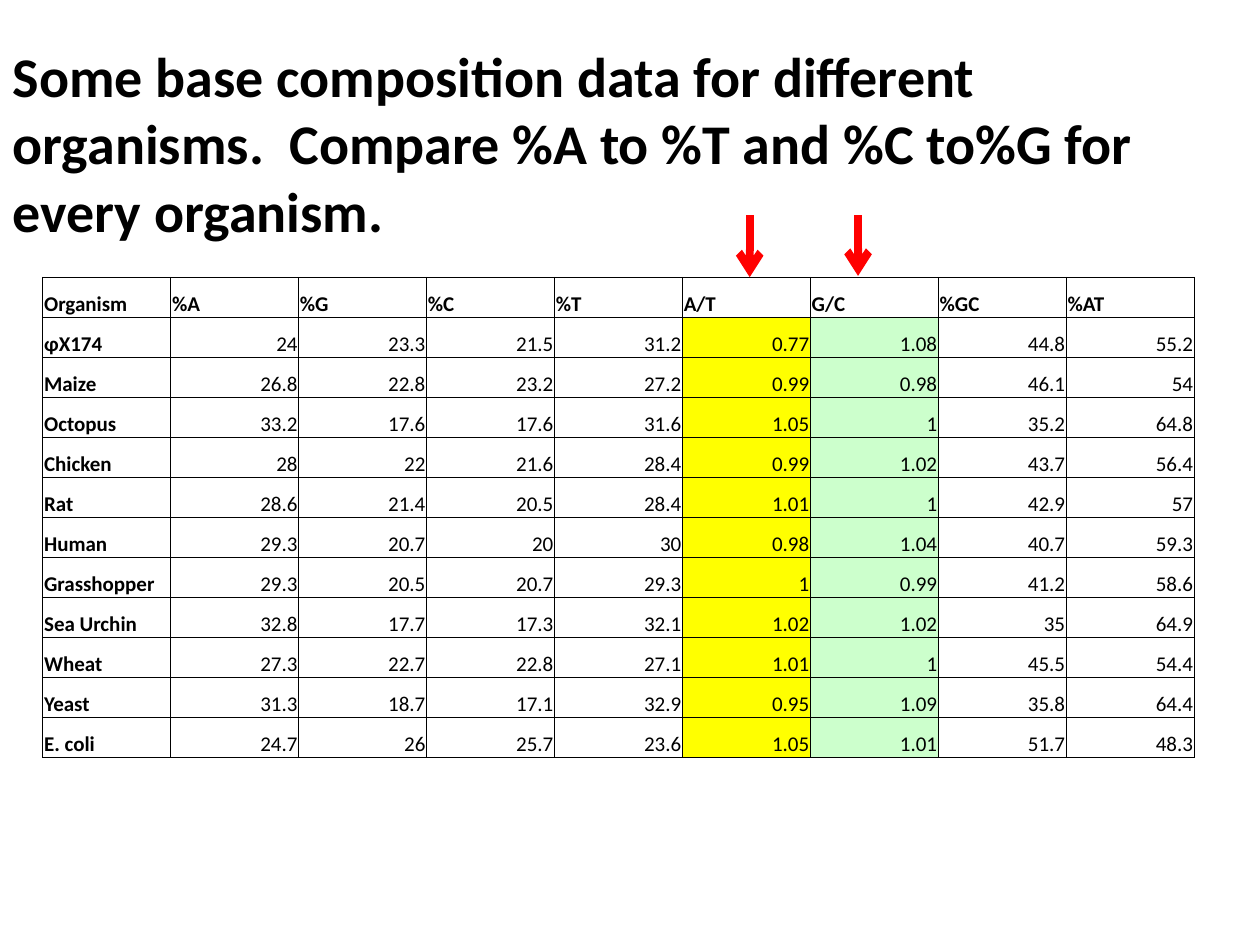
"""Build a slide comparing the base composition of DNA across organisms."""
from lxml import etree
from pptx import Presentation, oxml
from pptx.dml import color
from pptx.enum import shapes, text
from pptx.oxml import ns
from pptx.util import Pt

PX = 9144
THEME = {
    "font": "Calibri", "title": 32, "body": 12, "rule": 0.5, "arrow": 4.5,
    "ink": "000000", "red": "FF0000", "yellow": "FFFF00", "green": "CCFFCC",
}
TITLE = ("Some base composition data for different organisms.  "
         "Compare %A to %T and %C to%G for every organism.")
HEADS = ["Organism", "%A", "%G", "%C", "%T", "A/T", "G/C", "%GC", "%AT"]
DATA = [
    ["φX174", 24, 23.3, 21.5, 31.2, 0.77, 1.08, 44.8, 55.2],
    ["Maize", 26.8, 22.8, 23.2, 27.2, 0.99, 0.98, 46.1, 54],
    ["Octopus", 33.2, 17.6, 17.6, 31.6, 1.05, 1, 35.2, 64.8],
    ["Chicken", 28, 22, 21.6, 28.4, 0.99, 1.02, 43.7, 56.4],
    ["Rat", 28.6, 21.4, 20.5, 28.4, 1.01, 1, 42.9, 57],
    ["Human", 29.3, 20.7, 20, 30, 0.98, 1.04, 40.7, 59.3],
    ["Grasshopper", 29.3, 20.5, 20.7, 29.3, 1, 0.99, 41.2, 58.6],
    ["Sea Urchin", 32.8, 17.7, 17.3, 32.1, 1.02, 1.02, 35, 64.9],
    ["Wheat", 27.3, 22.7, 22.8, 27.1, 1.01, 1, 45.5, 54.4],
    ["Yeast", 31.3, 18.7, 17.1, 32.9, 0.95, 1.09, 35.8, 64.4],
    ["E. coli", 24.7, 26, 25.7, 23.6, 1.05, 1.01, 51.7, 48.3],
]
FILLS = {"A/T": THEME["yellow"], "G/C": THEME["green"]}
CELL = {
    "margin_left": PX, "margin_right": PX, "margin_top": PX, "margin_bottom": 0,
    "vertical_anchor": text.MSO_ANCHOR.BOTTOM,
}


def write(para, words, size, bold, align):
    run = para.add_run()
    run.text = words
    para.alignment = align
    look = {"name": THEME["font"], "size": Pt(THEME[size]), "bold": bold}
    for key, value in look.items():
        setattr(run.font, key, value)
    run.font.color.rgb = color.RGBColor.from_string(THEME["ink"])


def border(cell):
    props = cell._tc.get_or_add_tcPr()
    for side in "LRTB":
        props.append(oxml.parse_xml(
            f'<a:ln{side} {ns.nsdecls("a")} w="{Pt(THEME["rule"])}"><a:solidFill>'
            f'<a:srgbClr val="{THEME["ink"]}"/></a:solidFill></a:ln{side}>'))


deck = Presentation()
deck.slide_width, deck.slide_height = 1000 * PX, 750 * PX
slide = deck.slides.add_slide(deck.slide_layouts[5])

title = slide.shapes.title
place = {"left": 0, "top": 28, "width": 989, "height": 172}
for key, value in place.items():
    setattr(title, key, value * PX)
frame = title.text_frame
frame.word_wrap = True
frame.auto_size = text.MSO_AUTO_SIZE.NONE
frame.vertical_anchor = text.MSO_ANCHOR.TOP
write(frame.paragraphs[0], TITLE, "title", True, text.PP_ALIGN.LEFT)

rows = [HEADS] + DATA
wide, high = 914 * PX, 381 * PX
table = slide.shapes.add_table(
    len(rows), len(HEADS), 34 * PX, 220 * PX, wide, high).table
table.first_row = table.horz_banding = False
for col in table.columns:
    col.width = wide // len(HEADS)
for r, row in enumerate(rows):
    table.rows[r].height = high // len(rows)
    for c, value in enumerate(row):
        cell = table.cell(r, c)
        for key, item in CELL.items():
            setattr(cell, key, item)
        label = r == 0 or c == 0
        align = text.PP_ALIGN.LEFT if label else text.PP_ALIGN.RIGHT
        write(cell.text_frame.paragraphs[0], str(value), "body", label, align)
        border(cell)
        if r and HEADS[c] in FILLS:
            cell.fill.solid()
            cell.fill.fore_color.rgb = color.RGBColor.from_string(FILLS[HEADS[c]])
        else:
            cell.fill.background()

for x, end in ((595, 220), (681, 219)):
    arrow = slide.shapes.add_connector(
        shapes.MSO_CONNECTOR.STRAIGHT, x * PX, 171 * PX, x * PX, end * PX)
    arrow.line.width = Pt(THEME["arrow"])
    arrow.line.color.rgb = color.RGBColor.from_string(THEME["red"])
    props = arrow.element.spPr
    etree.SubElement(props.find(ns.qn("a:ln")), ns.qn("a:tailEnd"), type="arrow")
    etree.SubElement(props, ns.qn("a:effectLst"))

deck.save("out.pptx")
